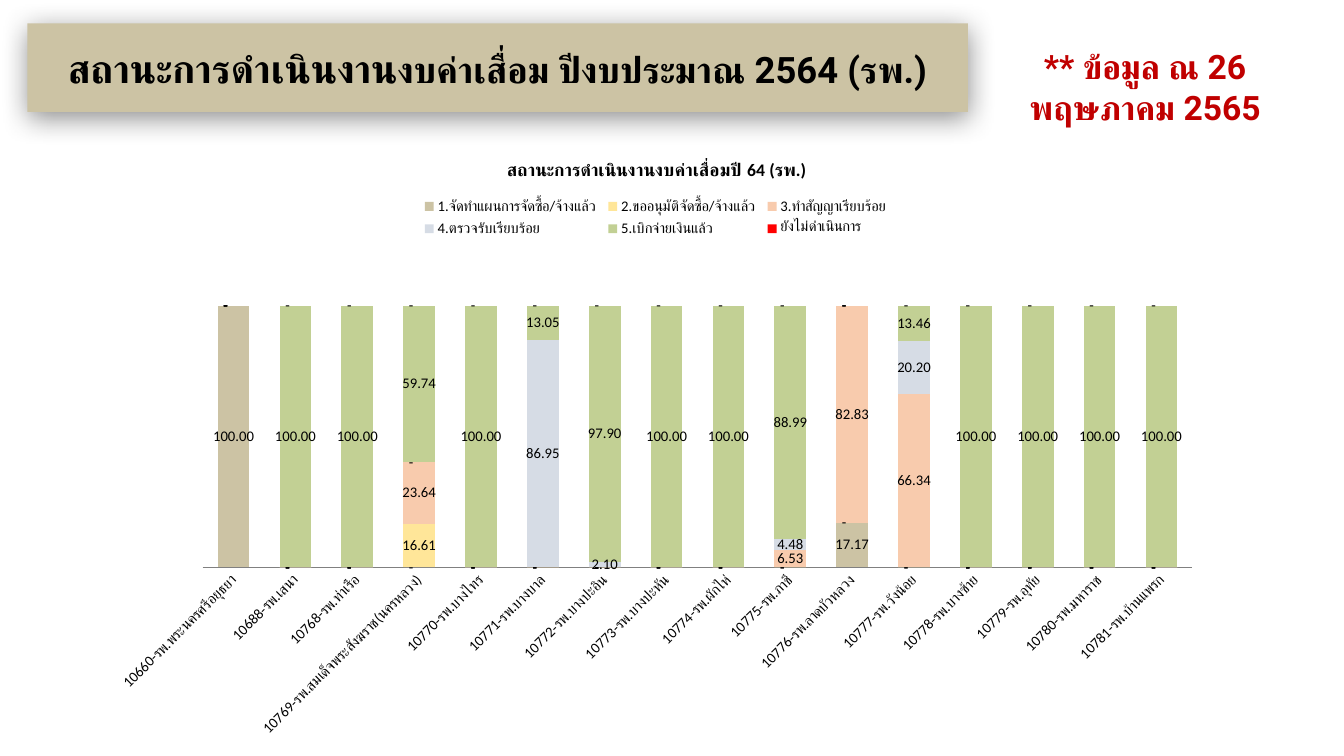
"""Build the slide on hospital depreciation-budget progress, fiscal year 2564."""
import dataclasses

import lxml.etree
import pptx
import pptx.chart.data
import pptx.dml.color
import pptx.enum.chart
import pptx.enum.shapes
import pptx.enum.text
import pptx.oxml.ns
import pptx.util

Pt = pptx.util.Pt
qn = pptx.oxml.ns.qn


@dataclasses.dataclass(frozen=True)
class Theme:
    black: str = "000000"
    white: str = "FFFFFF"
    sand: str = "CCC3A4"
    alert: str = "C00000"
    axis: str = "808080"
    heading_font: str = "Roboto"
    chart_font: str = "Calibri"
    lead_size: float = 28
    heading_size: float = 26
    note_size: float = 24
    chart_title_size: float = 12.6
    chart_size: float = 10.5
    number_format: str = '_(* #,##0.00_);_(* \\(#,##0.00\\);_(* "-"??_);_(@_)'


@dataclasses.dataclass(frozen=True)
class Box:
    left: float
    top: float
    width: float
    height: float


@dataclasses.dataclass(frozen=True)
class TextRun:
    text: str
    size: float
    color: str


@dataclasses.dataclass(frozen=True)
class Stage:
    key: str
    name: str
    color: str


@dataclasses.dataclass(frozen=True)
class Hospital:
    name: str
    planned: float = 0
    approval: float = 0
    contract: float = 0
    inspected: float = 0
    paid: float = 0
    pending: float = 0


THEME = Theme()
CHART = Box(69.8, 97.9, 798.5, 437.8)
STAGES = [
    Stage("planned", "1.จัดทำแผนการจัดซื้อ/จ้างแล้ว", THEME.sand),
    Stage("approval", "2.ขออนุมัติจัดซื้อ/จ้างแล้ว", "FFE699"),
    Stage("contract", "3.ทำสัญญาเรียบร้อย", "F8CBAD"),
    Stage("inspected", "4.ตรวจรับเรียบร้อย", "D6DCE5"),
    Stage("paid", "5.เบิกจ่ายเงินแล้ว", "C2D094"),
    Stage("pending", "ยังไม่ดำเนินการ", "FF0000"),
]
HOSPITALS = [
    Hospital("10660-รพ.พระนครศรีอยุธยา", planned=100),
    Hospital("10688-รพ.เสนา", paid=100),
    Hospital("10768-รพ.ท่าเรือ", paid=100),
    Hospital("10769-รพ.สมเด็จพระสังฆราช(นครหลวง)", approval=16.61, contract=23.64, paid=59.74),
    Hospital("10770-รพ.บางไทร", paid=100),
    Hospital("10771-รพ.บางบาล", inspected=86.95, paid=13.05),
    Hospital("10772-รพ.บางปะอิน", inspected=2.1, paid=97.9),
    Hospital("10773-รพ.บางปะหัน", paid=100),
    Hospital("10774-รพ.ผักไห่", paid=100),
    Hospital("10775-รพ.ภาชี", contract=6.53, inspected=4.48, paid=88.99),
    Hospital("10776-รพ.ลาดบัวหลวง", planned=17.17, contract=82.83),
    Hospital("10777-รพ.วังน้อย", contract=66.34, inspected=20.2, paid=13.46),
    Hospital("10778-รพ.บางซ้าย", paid=100),
    Hospital("10779-รพ.อุทัย", paid=100),
    Hospital("10780-รพ.มหาราช", paid=100),
    Hospital("10781-รพ.บ้านแพรก", paid=100),
]


def rgb(color: str) -> pptx.dml.color.RGBColor:
    return pptx.dml.color.RGBColor.from_string(color)


def fill_banner(shape, box: Box, fill: str, runs: list[TextRun]) -> None:
    shape.left, shape.top = Pt(box.left), Pt(box.top)
    shape.width, shape.height = Pt(box.width), Pt(box.height)
    shape.fill.solid()
    shape.fill.fore_color.rgb = rgb(fill)
    shape.line.fill.background()
    frame = shape.text_frame
    frame.word_wrap = True
    frame.auto_size = pptx.enum.text.MSO_AUTO_SIZE.NONE
    frame.vertical_anchor = pptx.enum.text.MSO_ANCHOR.MIDDLE
    paragraph = frame.paragraphs[0]
    paragraph.alignment = pptx.enum.text.PP_ALIGN.CENTER
    paragraph.line_spacing = 1.0
    for part in runs:
        run = paragraph.add_run()
        run.text = part.text
        run.font.name = THEME.heading_font
        run.font.size = Pt(part.size)
        run.font.bold = True
        run.font.color.rgb = rgb(part.color)
        lxml.etree.SubElement(run.font._element, qn("a:cs"), typeface=THEME.heading_font)


def add_soft_shadow(shape) -> None:
    shape.shadow.inherit = False
    effects = shape._element.spPr.find(qn("a:effectLst"))
    shadow = lxml.etree.SubElement(
        effects, qn("a:outerShdw"), blurRad=str(Pt(20)), dist=str(Pt(4)),
        dir="5400000", algn="t", rotWithShape="0")
    color = lxml.etree.SubElement(shadow, qn("a:srgbClr"), val=THEME.black)
    lxml.etree.SubElement(color, qn("a:alpha"), val="43000")


def place_in_chart(parent, before: str, box: Box, inner: bool = False) -> None:
    for old in parent.findall(qn("c:layout")):
        parent.remove(old)
    layout = lxml.etree.Element(qn("c:layout"))
    manual = lxml.etree.SubElement(layout, qn("c:manualLayout"))
    settings = [("layoutTarget", "inner")] if inner else []
    settings += [("xMode", "edge"), ("yMode", "edge"),
                 ("x", box.left / CHART.width), ("y", box.top / CHART.height),
                 ("w", box.width / CHART.width), ("h", box.height / CHART.height)]
    for tag, value in settings:
        lxml.etree.SubElement(manual, qn(f"c:{tag}"), val=str(value))
    parent.find(qn(before)).addprevious(layout)


def add_progress_chart(slide) -> None:
    progress = pptx.chart.data.CategoryChartData(number_format=THEME.number_format)
    progress.categories = [hospital.name for hospital in HOSPITALS]
    for stage in STAGES:
        progress.add_series(stage.name, [getattr(hospital, stage.key) for hospital in HOSPITALS])
    chart = slide.shapes.add_chart(
        pptx.enum.chart.XL_CHART_TYPE.COLUMN_STACKED, Pt(CHART.left), Pt(CHART.top),
        Pt(CHART.width), Pt(CHART.height), progress).chart
    chart.font.name = THEME.chart_font
    chart.font.size = Pt(THEME.chart_size)
    chart.font.color.rgb = rgb(THEME.black)

    chart.has_title = True
    heading = chart.chart_title.text_frame.paragraphs[0].add_run()
    heading.text = "สถานะการดำเนินงานงบค่าเสื่อมปี 64 (รพ.)"
    heading.font.name = THEME.chart_font
    heading.font.size = Pt(THEME.chart_title_size)
    heading.font.bold = True
    heading.font.color.rgb = rgb(THEME.black)

    chart.has_legend = True
    chart.legend.position = pptx.enum.chart.XL_LEGEND_POSITION.TOP
    chart.legend.include_in_layout = False
    place_in_chart(chart.legend._element, "c:overlay", Box(228.5, 40, 340, 35))

    share_axis = chart.value_axis
    share_axis.minimum_scale, share_axis.maximum_scale = 0, 120
    share_axis.has_major_gridlines = False
    share_axis.visible = False
    hospital_axis = chart.category_axis
    hospital_axis.major_tick_mark = pptx.enum.chart.XL_TICK_MARK.NONE
    hospital_axis.format.line.color.rgb = rgb(THEME.axis)
    hospital_axis.tick_labels.font.size = Pt(THEME.chart_size)
    hospital_axis._element.txPr.find(qn("a:bodyPr")).set("rot", "-2700000")

    plot = chart.plots[0]
    plot.gap_width, plot.overlap = 95, 100
    plot.vary_by_categories = False
    place_in_chart(chart._chartSpace.chart.plotArea, "c:barChart", Box(75, 83.5, 707, 224), True)
    for stage, series in zip(STAGES, plot.series):
        series.format.fill.solid()
        series.format.fill.fore_color.rgb = rgb(stage.color)
        series.data_labels.show_value = True
        series.data_labels.number_format = THEME.number_format
        series.data_labels.number_format_is_linked = False


def main() -> None:
    deck = pptx.Presentation()
    deck.slide_width, deck.slide_height = Pt(960), Pt(540)
    slide = deck.slides.add_slide(deck.slide_layouts[5])
    title = slide.shapes.title
    as_of = slide.shapes.add_shape(pptx.enum.shapes.MSO_SHAPE.RECTANGLE, 0, 0, 0, 0)
    as_of.shadow.inherit = False
    title._element.addprevious(as_of._element)
    fill_banner(as_of, Box(695.5, 28.8, 244.8, 66), THEME.white,
                [TextRun("** ข้อมูล ณ 26 พฤษภาคม 2565", THEME.note_size, THEME.alert)])
    fill_banner(title, Box(19.5, 16.6, 671.8, 63.4), THEME.sand, [
        TextRun("สถานะการดำเนินงาน", THEME.lead_size, THEME.black),
        TextRun("งบค่าเสื่อม ปีงบประมาณ 2564 (รพ.)", THEME.heading_size, THEME.black)])
    add_soft_shadow(title)
    add_progress_chart(slide)
    deck.save("out.pptx")


if __name__ == "__main__":
    main()
